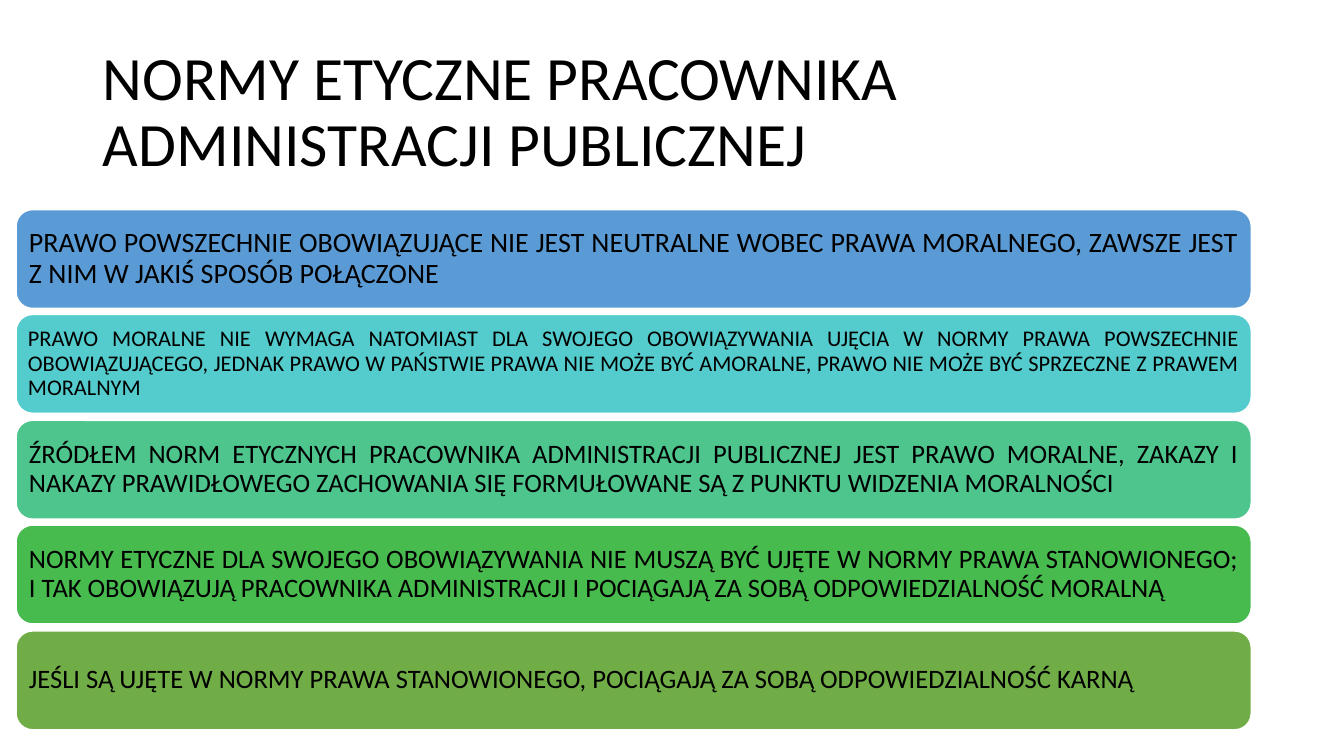
from pptx import Presentation
from pptx import util as u
from pptx.dml.color import RGBColor
from pptx.enum import shapes, text

PX = 9144
BLACK = RGBColor(0x00, 0x00, 0x00)
WHITE = RGBColor(0xFF, 0xFF, 0xFF)
BLUE = RGBColor(0x5B, 0x9B, 0xD5)
TEAL = RGBColor(0x54, 0xCC, 0xCD)
MINT = RGBColor(0x4D, 0xC5, 0x8D)
GREEN = RGBColor(0x48, 0xBB, 0x4F)
OLIVE = RGBColor(0x70, 0xAD, 0x47)

FIRST, LAST = 208, 626
TITLE = "NORMY ETYCZNE PRACOWNIKA ADMINISTRACJI PUBLICZNEJ"
NORMS = [
    (BLUE, 20, 8, "PRAWO POWSZECHNIE OBOWIĄZUJĄCE NIE JEST NEUTRALNE WOBEC PRAWA "
     "MORALNEGO, ZAWSZE JEST Z NIM W JAKIŚ SPOSÓB POŁĄCZONE"),
    (TEAL, 16, 7, "PRAWO MORALNE NIE WYMAGA NATOMIAST DLA SWOJEGO OBOWIĄZYWANIA UJĘCIA "
     "W NORMY PRAWA POWSZECHNIE OBOWIĄZUJĄCEGO, JEDNAK PRAWO W PAŃSTWIE PRAWA "
     "NIE MOŻE BYĆ AMORALNE, PRAWO NIE MOŻE BYĆ SPRZECZNE Z PRAWEM MORALNYM"),
    (MINT, 19, 8, "ŹRÓDŁEM NORM ETYCZNYCH PRACOWNIKA ADMINISTRACJI PUBLICZNEJ JEST "
     "PRAWO MORALNE, ZAKAZY I NAKAZY PRAWIDŁOWEGO ZACHOWANIA SIĘ FORMUŁOWANE "
     "SĄ Z PUNKTU WIDZENIA MORALNOŚCI"),
    (GREEN, 19, 8, "NORMY ETYCZNE DLA SWOJEGO OBOWIĄZYWANIA NIE MUSZĄ BYĆ UJĘTE W NORMY "
     "PRAWA STANOWIONEGO; I TAK OBOWIĄZUJĄ PRACOWNIKA ADMINISTRACJI "
     "I POCIĄGAJĄ ZA SOBĄ ODPOWIEDZIALNOŚĆ MORALNĄ"),
    (OLIVE, 19, 8, "JEŚLI SĄ UJĘTE W NORMY PRAWA STANOWIONEGO, POCIĄGAJĄ ZA SOBĄ "
     "ODPOWIEDZIALNOŚĆ KARNĄ"),
]


def px(*nums):
    return [u.Emu(n * PX) for n in nums]


def write(shape, words, size, align):
    frame = shape.text_frame
    frame.text = words
    frame.word_wrap = True
    frame.auto_size = text.MSO_AUTO_SIZE.NONE
    frame.vertical_anchor = text.MSO_ANCHOR.MIDDLE
    para = frame.paragraphs[0]
    para.alignment = align
    para.line_spacing = 0.9
    font = para.runs[0].font
    font.name = "Calibri"
    font.size = u.Pt(size)
    font.color.rgb = BLACK


def add_title(slide):
    title = slide.shapes.title
    title.left, title.top, title.width, title.height = px(92, 40, 1150, 145)
    write(title, TITLE, 44, text.PP_ALIGN.LEFT)


def add_norm(slide, top, fill, size, inset, words):
    bar = slide.shapes.add_shape(
        shapes.MSO_SHAPE.ROUNDED_RECTANGLE, *px(16, top, 1225, 98))
    bar.shadow.inherit = False
    bar.fill.solid()
    bar.fill.fore_color.rgb = fill
    bar.line.color.rgb = WHITE
    bar.line.width = u.Pt(1)
    frame = bar.text_frame
    frame.margin_left, frame.margin_top = px(inset, inset)
    frame.margin_right, frame.margin_bottom = px(inset, inset)
    write(bar, words, size, text.PP_ALIGN.JUSTIFY)


def main():
    deck = Presentation()
    deck.slide_width, deck.slide_height = px(1333, 750)
    slide = deck.slides.add_slide(deck.slide_layouts[5])
    add_title(slide)
    for i, norm in enumerate(NORMS):
        top = FIRST + (LAST - FIRST) * i // (len(NORMS) - 1)
        add_norm(slide, top, *norm)
    deck.save("out.pptx")


if __name__ == "__main__":
    main()
